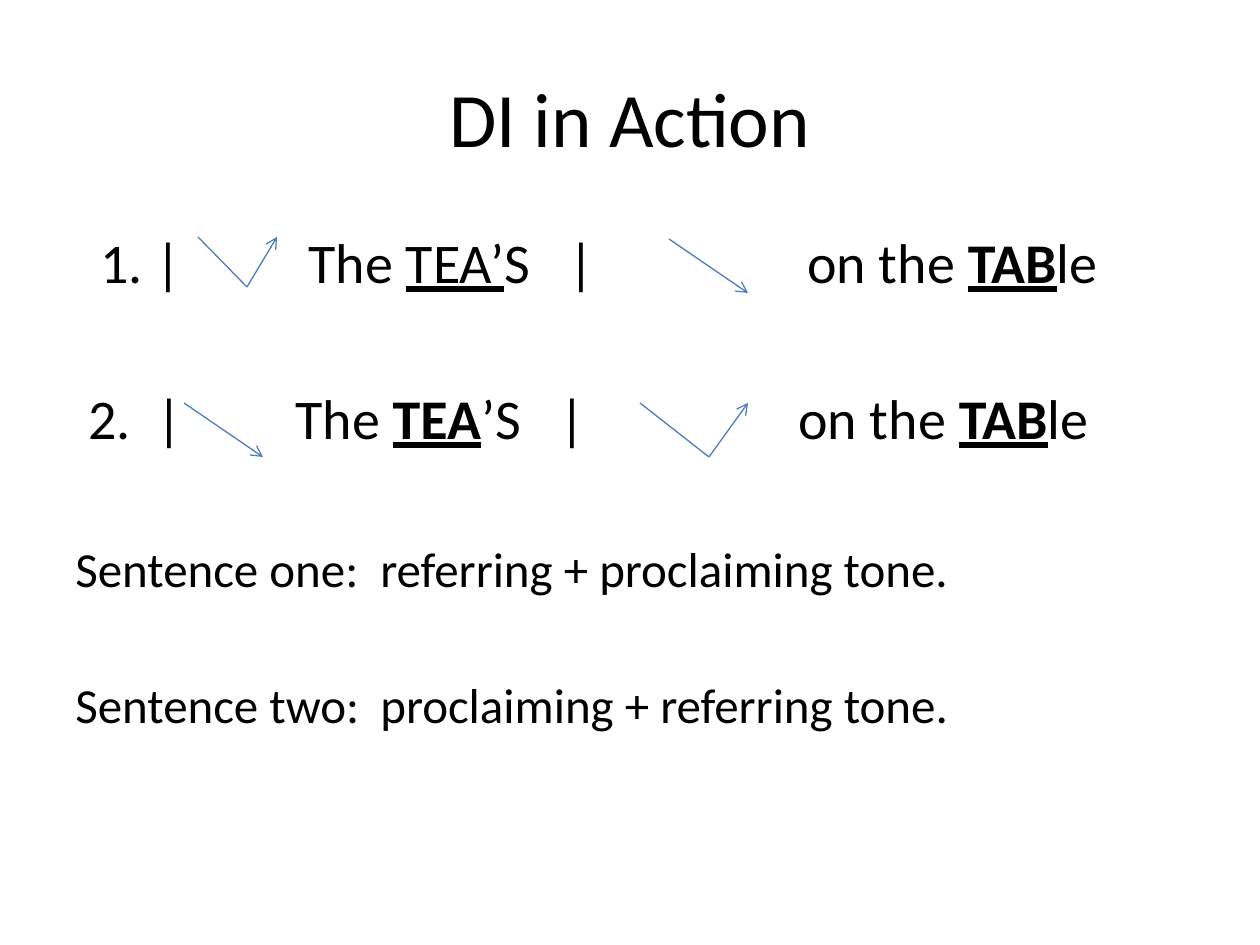
from itertools import pairwise

from lxml import etree
from pptx import Presentation
from pptx import util as u
from pptx.dml.color import RGBColor
from pptx.enum import shapes, text
from pptx.oxml.ns import qn

PX = u.Inches(1) // 126
COLORS = {"text": "000000", "arrow": "4B7EBC"}


def add_run(p, words, size=32, bold=False, underline=False):
    r = p.add_run()
    r.text = words
    r.font.name = "Calibri"
    r.font.size = u.Pt(size)
    r.font.bold = bold
    r.font.underline = underline
    r.font.color.rgb = RGBColor.from_string(COLORS["text"])


def set_tabs(p, stops):
    """Give the paragraph left tab stops, in px from the text edge."""
    tabs = etree.SubElement(p._p.get_or_add_pPr(), qn("a:tabLst"))
    for stop in stops:
        etree.SubElement(tabs, qn("a:tab"), pos=str(stop * PX), algn="l")


prs = Presentation()
prs.slide_width, prs.slide_height = u.Inches(10), u.Inches(7.5)
s = prs.slides.add_slide(prs.slide_layouts[5])

title = s.shapes.title
title.left, title.top, title.width, title.height = (
    v * PX for v in (63, 38, 1134, 157))
tf = title.text_frame
tf.vertical_anchor = text.MSO_ANCHOR.MIDDLE
p = tf.paragraphs[0]
p.alignment = text.PP_ALIGN.CENTER
add_run(p, "DI in Action", size=44)

# Body: space before, tab stops, runs
PLAIN, LINE, STRONG = {}, {"underline": True}, {"bold": True, "underline": True}
SMALL = {"size": 28}
paragraphs = [
    (0, (25, 233, 493, 732),
     [("\t1. |\tThe ", PLAIN), ("TEA’", LINE), ("S\t|\ton the ", PLAIN),
      ("TAB", STRONG), ("le", PLAIN)]),
    (89, (13, 81, 220, 484, 723),
     [("\t2.\t|\tThe ", PLAIN), ("TEA", STRONG), ("’S\t|\ton the ", PLAIN),
      ("TAB", STRONG), ("le", PLAIN)]),
    (88, (305,),
     [("Sentence one:\treferring + proclaiming tone.", SMALL)]),
    (77, (305,),
     [("Sentence two:\tproclaiming + referring tone.", SMALL)]),
]
body = s.shapes.add_textbox(*(v * PX for v in (63, 221, 1134, 624)))
tf = body.text_frame
tf.word_wrap = True
for i, (space, stops, runs) in enumerate(paragraphs):
    p = tf.add_paragraph() if i else tf.paragraphs[0]
    p.space_before = u.Emu(space * PX)
    set_tabs(p, stops)
    for words, style in runs:
        add_run(p, words, **style)

# Tone contours: each ends in an arrowhead
contours = [
    [(198, 237), (247, 287), (277, 237)],
    [(669, 239), (748, 293)],
    [(184, 403), (263, 457)],
    [(640, 403), (709, 457), (748, 403)],
]
for points in contours:
    for start, end in pairwise(points):
        line = s.shapes.add_connector(
            shapes.MSO_CONNECTOR.STRAIGHT, *(v * PX for v in start + end))
        line.line.color.rgb = RGBColor.from_string(COLORS["arrow"])
        line.line.width = u.Pt(0.75)
        if end == points[-1]:
            etree.SubElement(line.line._get_or_add_ln(), qn("a:tailEnd"),
                             type="arrow")
        etree.SubElement(line._element.spPr, qn("a:effectLst"))

prs.save("out.pptx")
